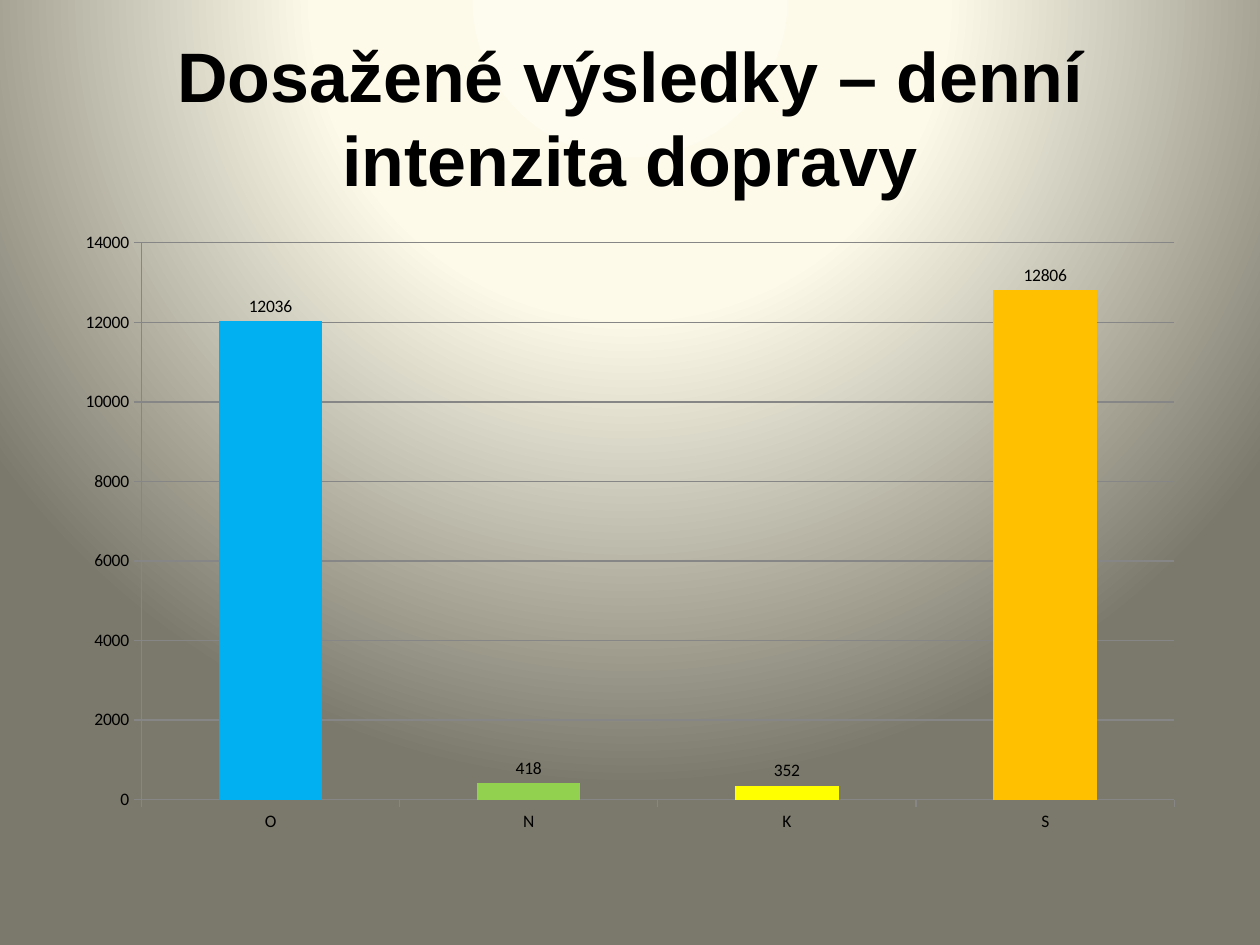
import pptx
import pptx.chart.data
import pptx.dml.color
import pptx.enum.chart
import pptx.enum.text
import pptx.oxml
import pptx.util

Pt = pptx.util.Pt
RGBColor = pptx.dml.color.RGBColor

BLACK = RGBColor(0x00, 0x00, 0x00)
GRID_GREY = RGBColor(0x86, 0x86, 0x86)
SERIES_BLUE = RGBColor(0x4F, 0x81, 0xBD)
BAR_COLORS = [
    RGBColor(0x00, 0xB0, 0xF0),
    RGBColor(0x92, 0xD0, 0x50),
    RGBColor(0xFF, 0xFF, 0x00),
    RGBColor(0xFF, 0xC0, 0x00),
]
BACKGROUND_STOPS = [
    (0, RGBColor(0xFE, 0xFC, 0xEE)),
    (40, RGBColor(0xFD, 0xFA, 0xEA)),
    (100, RGBColor(0x7B, 0x79, 0x6B)),
]

CATEGORIES = ["O", "N", "K", "S"]
INTENSITIES = [12036, 418, 352, 12806]


def set_background(slide, stops):
    """Fill the slide with a circular gradient centred above its top edge."""
    fill = slide.background.fill
    fill.gradient()
    stop_xml = "".join(
        f'<a:gs pos="{percent * 1000}"><a:srgbClr val="{color}"/></a:gs>'
        for percent, color in stops
    )
    gradient = pptx.oxml.parse_xml(
        '<a:gradFill xmlns:a="http://schemas.openxmlformats.org/drawingml/2006/main"'
        f' rotWithShape="1"><a:gsLst>{stop_xml}</a:gsLst>'
        '<a:path path="circle"><a:fillToRect l="50000" t="-80000" r="50000" b="180000"/>'
        "</a:path></a:gradFill>"
    )
    default = slide.element.xpath("./p:cSld/p:bg/p:bgPr/a:gradFill")[0]
    default.getparent().replace(default, gradient)


def format_font(font, name, size, color, bold=False):
    font.name = name
    font.size = Pt(size)
    font.bold = bold
    font.color.rgb = color


def write_text(shape, text, *, font_name, size, color, bold, alignment):
    """Put one formatted paragraph into a shape."""
    frame = shape.text_frame
    frame.word_wrap = True
    frame.auto_size = pptx.enum.text.MSO_AUTO_SIZE.NONE
    frame.vertical_anchor = pptx.enum.text.MSO_ANCHOR.MIDDLE
    paragraph = frame.paragraphs[0]
    paragraph.alignment = alignment
    run = paragraph.add_run()
    run.text = text
    format_font(run.font, font_name, size, color, bold)


def add_title(slide, text):
    title = slide.shapes.title
    title.left, title.top, title.width, title.height = Pt(36), Pt(21.6), Pt(648), Pt(90)
    write_text(title, text, font_name="Arial", size=40, color=BLACK, bold=True,
               alignment=pptx.enum.text.PP_ALIGN.CENTER)


def format_axis(axis):
    axis.major_tick_mark = pptx.enum.chart.XL_TICK_MARK.OUTSIDE
    axis.minor_tick_mark = pptx.enum.chart.XL_TICK_MARK.NONE
    axis.format.line.color.rgb = GRID_GREY
    axis.format.line.width = Pt(0.75)


def add_intensity_chart(slide):
    data = pptx.chart.data.CategoryChartData()
    data.categories = CATEGORIES
    data.add_series("Series 1", INTENSITIES)
    chart = slide.shapes.add_chart(
        pptx.enum.chart.XL_CHART_TYPE.COLUMN_CLUSTERED,
        Pt(36), Pt(126), Pt(648), Pt(356.4), data,
    ).chart
    chart.has_title = False
    chart.has_legend = False
    format_font(chart.font, "Calibri", 10, BLACK)

    # Axes and gridlines
    format_axis(chart.category_axis)
    value_axis = chart.value_axis
    format_axis(value_axis)
    value_axis.minimum_scale = 0
    value_axis.maximum_scale = 14000
    value_axis.major_unit = 2000
    value_axis.has_major_gridlines = True
    grid_line = value_axis.major_gridlines.format.line
    grid_line.color.rgb = GRID_GREY
    grid_line.width = Pt(0.75)

    # Bars, one colour for each category
    plot = chart.plots[0]
    plot.gap_width = 150
    plot.vary_by_categories = False
    series = plot.series[0]
    series.format.fill.solid()
    series.format.fill.fore_color.rgb = SERIES_BLUE
    for index, color in enumerate(BAR_COLORS):
        fill = series.points[index].format.fill
        fill.solid()
        fill.fore_color.rgb = color

    # Value labels above the bars
    labels = series.data_labels
    labels.show_value = True
    labels.position = pptx.enum.chart.XL_LABEL_POSITION.OUTSIDE_END
    format_font(labels.font, "Calibri", 10, BLACK)


def main():
    presentation = pptx.Presentation()
    presentation.slide_width = Pt(720)
    presentation.slide_height = Pt(540)
    slide = presentation.slides.add_slide(presentation.slide_layouts[5])
    set_background(slide, BACKGROUND_STOPS)
    add_title(slide, "Dosažené výsledky – denní intenzita dopravy")
    add_intensity_chart(slide)
    presentation.save("out.pptx")


if __name__ == "__main__":
    main()
